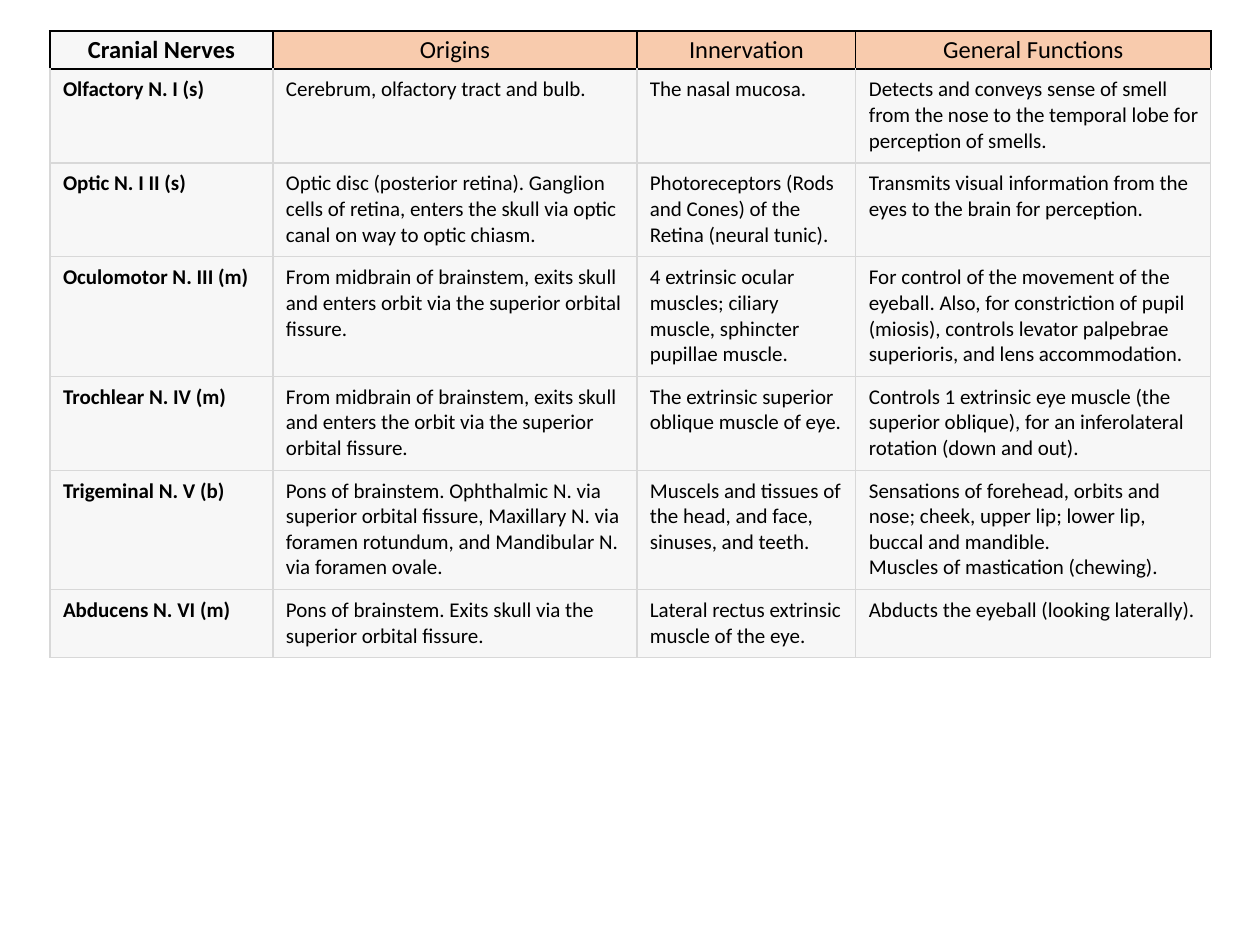
from dataclasses import dataclass

from lxml.etree import SubElement
from pptx import Presentation
from pptx.dml.color import RGBColor
from pptx.enum.text import MSO_ANCHOR, PP_ALIGN
from pptx.oxml.ns import qn
from pptx.util import Emu, Pt

EMU_PER_PX = 914400 // 126


def px(n: int) -> Emu:
    return Emu(n * EMU_PER_PX)


@dataclass(frozen=True)
class Theme:
    font: str = "Calibri"
    header_pt: int = 14
    body_pt: int = 12
    text: str = "000000"
    pale: str = "F7F7F7"
    peach: str = "F8CBAD"
    grid: str = "D8D8D8"
    frame: str = "000000"
    line_pt: float = 0.75
    side_pt: float = 1.5


@dataclass(frozen=True)
class CellStyle:
    size: int
    margins: tuple[int, int, int, int]  # left, top, right, bottom
    anchor: MSO_ANCHOR
    align: PP_ALIGN


@dataclass(frozen=True)
class Nerve:
    name: str
    origin: str
    innervation: str
    functions: str
    height: int


THEME = Theme()
HEADER = CellStyle(THEME.header_pt, (8, 4, 8, 4), MSO_ANCHOR.MIDDLE, PP_ALIGN.CENTER)
BODY = CellStyle(THEME.body_pt, (13, 8, 12, 9), MSO_ANCHOR.TOP, PP_ALIGN.LEFT)

LEFT, TOP, HEADER_HEIGHT = 50, 31, 38
COLUMNS = {"Cranial Nerves": 223, "Origins": 364, "Innervation": 219, "General Functions": 355}
NERVES = [
    Nerve("Olfactory N. I (s)",
          "Cerebrum, olfactory tract and bulb.",
          "The nasal mucosa.",
          "Detects and conveys sense of smell from the nose to the temporal lobe "
          "for perception of smells.", 94),
    Nerve("Optic N. I II (s)",
          "Optic disc (posterior retina). Ganglion cells of retina, enters the skull "
          "via optic canal on way to optic chiasm.",
          "Photoreceptors (Rods and Cones) of the Retina (neural tunic).",
          "Transmits visual information from the eyes to the brain for perception.", 94),
    Nerve("Oculomotor N. III (m)",
          "From midbrain of brainstem, exits skull and enters orbit via the superior "
          "orbital fissure.",
          "4 extrinsic ocular muscles; ciliary muscle, sphincter pupillae muscle.",
          "For control of the movement of the eyeball. Also, for constriction of pupil "
          "(miosis), controls levator palpebrae superioris, and lens accommodation.", 119),
    Nerve("Trochlear N. IV (m)",
          "From midbrain of brainstem, exits skull and enters the orbit via the superior "
          "orbital fissure.",
          "The extrinsic superior oblique muscle of eye.",
          "Controls 1 extrinsic eye muscle (the superior oblique), for an inferolateral "
          "rotation (down and out).", 94),
    Nerve("Trigeminal N. V (b)",
          "Pons of brainstem. Ophthalmic N. via superior orbital fissure, Maxillary N. via "
          "foramen rotundum, and Mandibular N. via foramen ovale.",
          "Muscels and tissues of the head, and face, sinuses, and teeth.",
          "Sensations of forehead, orbits and nose; cheek, upper lip; lower lip, buccal "
          "and mandible.\nMuscles of mastication (chewing).", 119),
    Nerve("Abducens N. VI (m)",
          "Pons of brainstem. Exits skull via the superior orbital fissure.",
          "Lateral rectus extrinsic muscle of the eye.",
          "Abducts the eyeball (looking laterally).", 68),
]


def set_border(cell, side: str, color: str, width: float) -> None:
    ln = SubElement(cell._tc.get_or_add_tcPr(), qn(f"a:ln{side}"), w=str(Pt(width)))
    SubElement(SubElement(ln, qn("a:solidFill")), qn("a:srgbClr"), val=color)


def fill_cell(cell, text: str, style: CellStyle, fill: str, bold: bool) -> None:
    cell.fill.solid()
    cell.fill.fore_color.rgb = RGBColor.from_string(fill)
    left, top, right, bottom = style.margins
    cell.margin_left, cell.margin_right = px(left), px(right)
    cell.margin_top, cell.margin_bottom = px(top), px(bottom)
    cell.vertical_anchor = style.anchor
    cell.text_frame.text = text
    for p in cell.text_frame.paragraphs:
        p.alignment = style.align
        p.font.name = THEME.font
        p.font.size = Pt(style.size)
        p.font.bold = bold
        p.font.color.rgb = RGBColor.from_string(THEME.text)


def draw_table(s) -> None:
    heights = [HEADER_HEIGHT] + [n.height for n in NERVES]
    last = len(COLUMNS) - 1
    table = s.shapes.add_table(len(heights), len(COLUMNS), px(LEFT), px(TOP),
                               px(sum(COLUMNS.values())), px(sum(heights))).table
    table.first_row = table.horz_banding = False
    for column, width in zip(table.columns, COLUMNS.values()):
        column.width = px(width)
    for row, height in zip(table.rows, heights):
        row.height = px(height)

    # Header row: black frame with heavier outer sides
    for c, title in enumerate(COLUMNS):
        cell = table.cell(0, c)
        for side in "LRTB":
            outer = (side, c) in (("L", 0), ("R", last))
            set_border(cell, side, THEME.frame, THEME.side_pt if outer else THEME.line_pt)
        fill_cell(cell, title, HEADER, THEME.peach if c else THEME.pale, c == 0)

    # One row per nerve: grey grid, black line under the header
    for r, n in enumerate(NERVES, 1):
        for c, text in enumerate((n.name, n.origin, n.innervation, n.functions)):
            cell = table.cell(r, c)
            for side in "LRTB":
                under_header = r == 1 and side == "T"
                set_border(cell, side, THEME.frame if under_header else THEME.grid, THEME.line_pt)
            fill_cell(cell, text, BODY, THEME.pale, c == 0)


def main() -> None:
    prs = Presentation()
    prs.slide_width, prs.slide_height = px(1260), px(945)
    s = prs.slides.add_slide(prs.slide_layouts[6])
    draw_table(s)
    prs.save("out.pptx")


if __name__ == "__main__":
    main()
